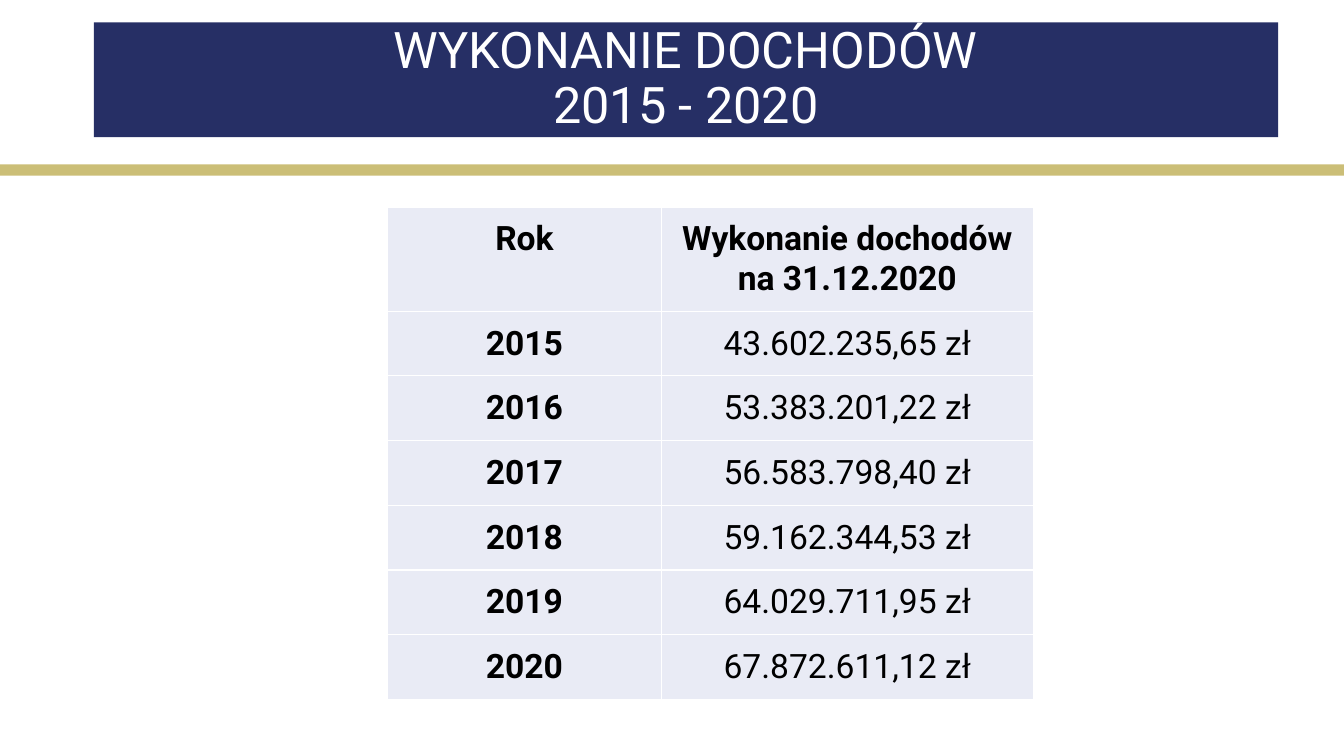
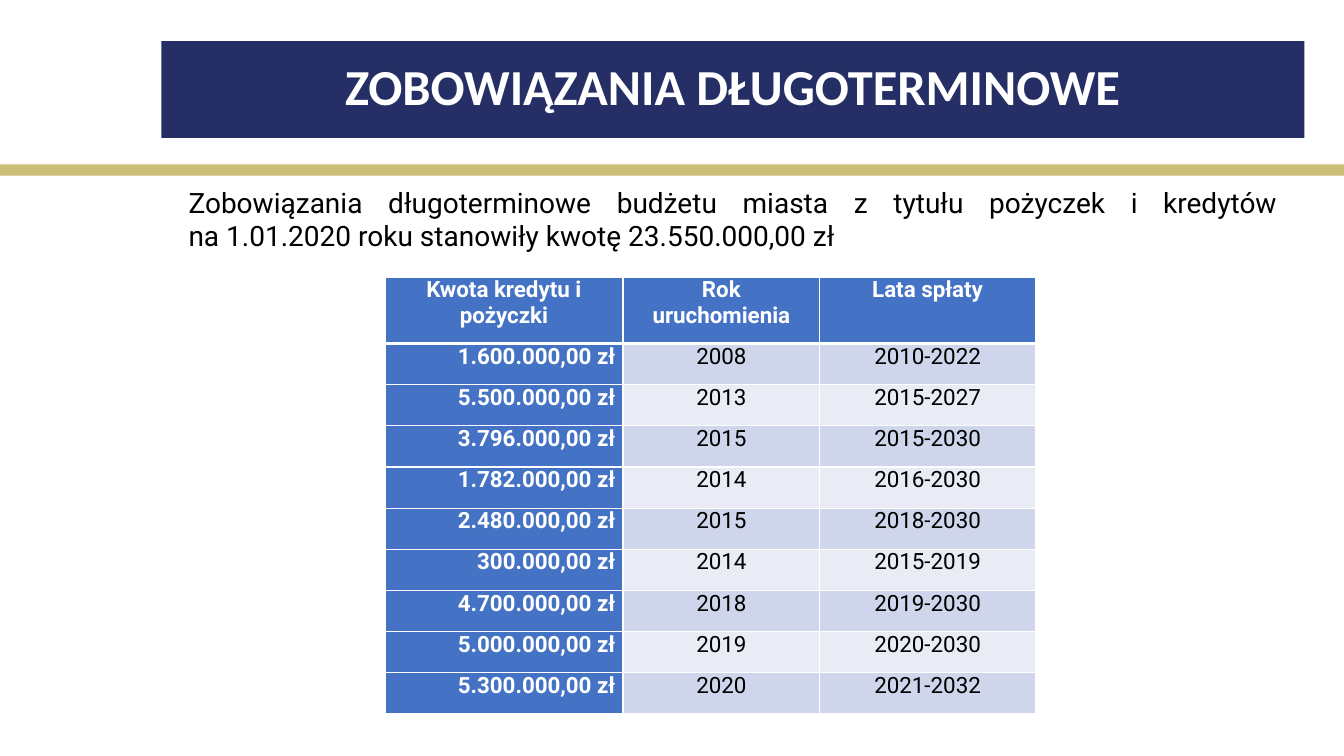
"""Builds two slides on city income and long-term liabilities."""
from lxml import etree
from pptx import Presentation
from pptx.dml.color import RGBColor
from pptx.enum.shapes import MSO_SHAPE
from pptx.enum.text import MSO_ANCHOR, MSO_AUTO_SIZE, PP_ALIGN
from pptx.oxml.ns import qn
from pptx.util import Pt

RECTANGLE = MSO_SHAPE.RECTANGLE
MIDDLE = MSO_ANCHOR.MIDDLE
NO_AUTOFIT = MSO_AUTO_SIZE.NONE
CENTER, RIGHT, JUSTIFY = PP_ALIGN.CENTER, PP_ALIGN.RIGHT, PP_ALIGN.JUSTIFY

WIDTH, HEIGHT = 960, 540
NAVY, GOLD, BLUE = "262F65", "CBBE77", "4472C4"
PALE, TINT, WHITE, BLACK = "E9EBF5", "CFD5EA", "FFFFFF", "000000"
FONT = "Roboto"

INCOME_TITLE = "WYKONANIE DOCHODÓW\v2015 - 2020"
INCOME = [
    ("Rok", "Wykonanie dochodów\nna 31.12.2020"),
    ("2015", "43.602.235,65 zł"),
    ("2016", "53.383.201,22 zł"),
    ("2017", "56.583.798,40 zł"),
    ("2018", "59.162.344,53 zł"),
    ("2019", "64.029.711,95 zł"),
    ("2020", "67.872.611,12 zł"),
]
DEBT_TITLE = "ZOBOWIĄZANIA DŁUGOTERMINOWE"
DEBT_INTRO = (
    "Zobowiązania długoterminowe budżetu miasta z tytułu pożyczek i kredytów\v"
    "na 1.01.2020 roku stanowiły kwotę 23.550.000,00 zł"
)
DEBT = [
    ("Kwota kredytu i pożyczki", "Rok uruchomienia", "Lata spłaty"),
    ("1.600.000,00 zł", "2008", "2010-2022"),
    ("5.500.000,00 zł", "2013", "2015-2027"),
    ("3.796.000,00 zł", "2015", "2015-2030"),
    ("1.782.000,00 zł", "2014", "2016-2030"),
    ("2.480.000,00 zł", "2015", "2018-2030"),
    ("300.000,00 zł", "2014", "2015-2019"),
    ("4.700.000,00 zł", "2018", "2019-2030"),
    ("5.000.000,00 zł", "2019", "2020-2030"),
    ("5.300.000,00 zł", "2020", "2021-2032"),
]


def color(value):
    return RGBColor.from_string(value)


def paint(target, value):
    target.fill.solid()
    target.fill.fore_color.rgb = color(value)


def style(frame, size, ink, align, bold=False, font=FONT):
    frame.word_wrap = True
    for para in frame.paragraphs:
        para.alignment = align
        para.font.name = font
        para.font.size = Pt(size)
        para.font.bold = bold
        para.font.color.rgb = color(ink)


def add_page(deck, layout, title, place, bold=False, font=FONT):
    page = deck.slides.add_slide(layout)
    band = page.shapes.title
    band.left, band.top, band.width, band.height = map(Pt, place)
    paint(band, NAVY)
    frame = band.text_frame
    frame.text = title
    frame.auto_size = NO_AUTOFIT
    frame.vertical_anchor = MIDDLE
    style(frame, 36, WHITE, CENTER, bold, font)
    for para in frame.paragraphs:
        para.line_spacing = 0.9
    return page


def add_stripe(page, layout):
    stripe = page.shapes.add_shape(RECTANGLE, 0, Pt(117.5), Pt(WIDTH), Pt(8))
    stripe.shadow.inherit = False
    stripe.line.fill.background()
    paint(stripe, GOLD)
    layout.shapes.element.append(stripe.element)


def set_borders(cell, bottom):
    properties = cell._tc.get_or_add_tcPr()
    for side, width in (("L", 1), ("R", 1), ("T", 1), ("B", bottom)):
        line = etree.SubElement(properties, qn(f"a:ln{side}"), w=str(Pt(width)))
        fill = etree.SubElement(line, qn("a:solidFill"))
        etree.SubElement(fill, qn("a:srgbClr"), val=WHITE)


def add_grid(page, rows, left, top, widths, heights, insets, size, look):
    """Add a table; look(row, column) gives fill, ink, bold, alignment and bottom line."""
    frame = page.shapes.add_table(len(rows), len(widths), Pt(left), Pt(top),
                                  Pt(sum(widths)), Pt(sum(heights)))
    table = frame.table
    table.first_row = table.horz_banding = False
    for column, width in zip(table.columns, widths):
        column.width = Pt(width)
    for r, (texts, height) in enumerate(zip(rows, heights)):
        table.rows[r].height = Pt(height)
        for c, text in enumerate(texts):
            fill, ink, bold, align, bottom = look(r, c)
            cell = table.cell(r, c)
            cell.text = text
            cell.margin_left = cell.margin_right = Pt(insets[0])
            cell.margin_top = cell.margin_bottom = Pt(insets[1])
            set_borders(cell, bottom)
            paint(cell, fill)
            style(cell.text_frame, size, ink, align, bold)


def income_look(row, column):
    return PALE, BLACK, row == 0 or column == 0, CENTER, 1


def debt_look(row, column):
    if row == 0:
        return BLUE, WHITE, True, CENTER, 3
    if column == 0:
        return BLUE, WHITE, True, RIGHT, 1
    return TINT if row % 2 else PALE, BLACK, False, CENTER, 1


def main():
    deck = Presentation()
    deck.slide_width, deck.slide_height = Pt(WIDTH), Pt(HEIGHT)
    layout = deck.slide_layouts[5]

    income = add_page(deck, layout, INCOME_TITLE, (67, 16, 846, 82))
    add_stripe(income, layout)
    add_grid(income, INCOME, 276.8, 147.8, (195.6, 265.6),
             [74.5] + [46.2] * (len(INCOME) - 1), (9, 9), 24, income_look)

    debt = add_page(deck, layout, DEBT_TITLE, (115.2, 29.3, 816.5, 69.2), True, "Calibri")
    add_grid(debt, DEBT, 275, 198, (170, 140.6, 154),
             [47.4] + [29.4] * (len(DEBT) - 1), (5.4, 0), 16, debt_look)
    intro = debt.shapes.add_textbox(Pt(127.6), Pt(128.4), Pt(792), Pt(55.7))
    intro.text_frame.text = DEBT_INTRO
    intro.text_frame.vertical_anchor = MIDDLE
    style(intro.text_frame, 20, BLACK, JUSTIFY)

    deck.save("out.pptx")


if __name__ == "__main__":
    main()
